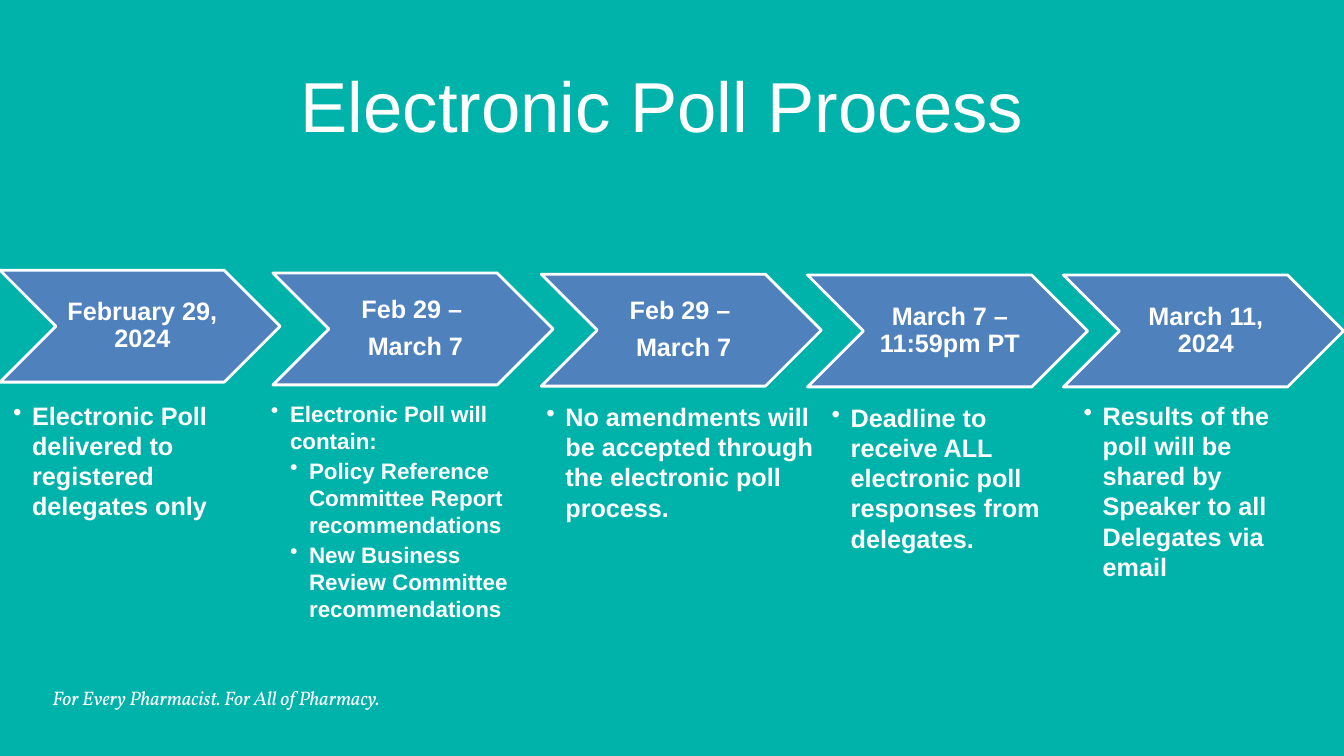
from lxml import etree
from pptx import Presentation
from pptx.dml.color import RGBColor
from pptx.enum import shapes, text
from pptx.oxml import ns
from pptx.util import Cm, Pt

TEAL = RGBColor(0x00, 0xB3, 0xAA)
BLUE = RGBColor(0x4F, 0x81, 0xBD)
WHITE = RGBColor(0xFF, 0xFF, 0xFF)

CHEVRON_W, CHEVRON_H = 7.06, 2.82
BULLET_INDENT = 0.48

STEPS = [
    dict(at=(0, 6.81), dates=["February 29, 2024"], body=(0.33, 10.08, 5.64),
         size=18, bullets=[(0, "Electronic Poll delivered to registered delegates only")]),
    dict(at=(6.88, 6.88), dates=["Feb 29 – ", "March 7"], body=(6.83, 10.08, 6.48),
         size=16, bullets=[(0, "Electronic Poll will contain:"),
                           (1, "Policy Reference Committee Report recommendations"),
                           (1, "New Business Review Committee recommendations")]),
    dict(at=(13.64, 6.91), dates=["Feb 29 – ", "March 7"], body=(13.77, 10.11, 6.73),
         size=18, bullets=[(0, "No amendments will be accepted through "
                               "the electronic poll process.")]),
    dict(at=(20.35, 6.93), dates=["March 7 – 11:59pm PT"], body=(20.96, 10.13, 5.64),
         size=18, bullets=[(0, "Deadline to receive ALL electronic poll "
                               "responses from delegates.")]),
    dict(at=(26.8, 6.93), dates=["March 11, 2024"], body=(27.31, 10.08, 5.64),
         size=18, bullets=[(0, "Results of the poll will be shared by Speaker "
                               "to all Delegates via email")]),
]


def set_all(obj, values):
    for name, value in values.items():
        setattr(obj, name, value)


def set_frame(tf, margins, anchor=text.MSO_ANCHOR.TOP):
    left, top, right, bottom = (Cm(m) for m in margins)
    set_all(tf, dict(margin_left=left, margin_top=top, margin_right=right,
                     margin_bottom=bottom, word_wrap=True, vertical_anchor=anchor,
                     auto_size=text.MSO_AUTO_SIZE.NONE))


def add_bullet(p, level):
    p.level = level
    pPr = p._p.get_or_add_pPr()
    pPr.set("marL", str(Cm(BULLET_INDENT * (level + 1))))
    pPr.set("indent", str(-Cm(BULLET_INDENT)))
    etree.SubElement(pPr, ns.qn("a:buChar")).set("char", "•")


def write(tf, lines, font, para=None, bulleted=False):
    for i, (level, line) in enumerate(lines):
        p = tf.paragraphs[0] if i == 0 else tf.add_paragraph()
        if bulleted:
            add_bullet(p, level)
        set_all(p, para or {})
        r = p.add_run()
        r.text = line
        set_all(r.font, font)
        r.font.color.rgb = WHITE


def add_title(s, title):
    sp = s.shapes.title
    set_all(sp, dict(left=Cm(1.57), top=Cm(1.55), width=Cm(30.73), height=Cm(2.16)))
    set_frame(sp.text_frame, (0, 0, 0, 0))
    write(sp.text_frame, [(0, title)], dict(name="Arial", size=Pt(50.5)),
          dict(alignment=text.PP_ALIGN.CENTER, line_spacing=1.0))


def add_chevron(s, at, dates):
    sp = s.shapes.add_shape(shapes.MSO_SHAPE.CHEVRON, Cm(at[0]), Cm(at[1]),
                            Cm(CHEVRON_W), Cm(CHEVRON_H))
    sp.shadow.inherit = False
    sp.fill.solid()
    sp.fill.fore_color.rgb = BLUE
    sp.line.color.rgb = WHITE
    sp.line.width = Pt(2)
    set_frame(sp.text_frame, (0.2, 0.08, 0.08, 0.08), text.MSO_ANCHOR.MIDDLE)
    write(sp.text_frame, [(0, d) for d in dates],
          dict(name="Arial", size=Pt(18), bold=True),
          dict(alignment=text.PP_ALIGN.CENTER, line_spacing=0.9, space_after=Pt(7)))


def add_bullets(s, body, size, bullets):
    left, top, width = (Cm(v) for v in body)
    tf = s.shapes.add_textbox(left, top, width, Cm(5.4)).text_frame
    set_frame(tf, (0, 0, 0, 0))
    write(tf, bullets, dict(name="Arial", size=Pt(size), bold=True),
          dict(space_after=Pt(2.5)), bulleted=True)


def add_tagline(s, line):
    tf = s.shapes.add_textbox(Cm(1.07), Cm(17.15), Cm(11.63), Cm(0.86)).text_frame
    set_frame(tf, (0.25, 0.13, 0.25, 0.13))
    write(tf, [(0, line)], dict(name="Vollkorn", size=Pt(14), italic=True))


def main():
    prs = Presentation()
    set_all(prs, dict(slide_width=Cm(33.87), slide_height=Cm(19.05)))
    s = prs.slides.add_slide(prs.slide_layouts[5])
    s.background.fill.solid()
    s.background.fill.fore_color.rgb = TEAL
    add_title(s, "Electronic Poll Process ")
    add_tagline(s, "For Every Pharmacist. For All of Pharmacy.")
    for step in STEPS:
        add_chevron(s, step["at"], step["dates"])
        add_bullets(s, step["body"], step["size"], step["bullets"])
    prs.save("out.pptx")


if __name__ == "__main__":
    main()
